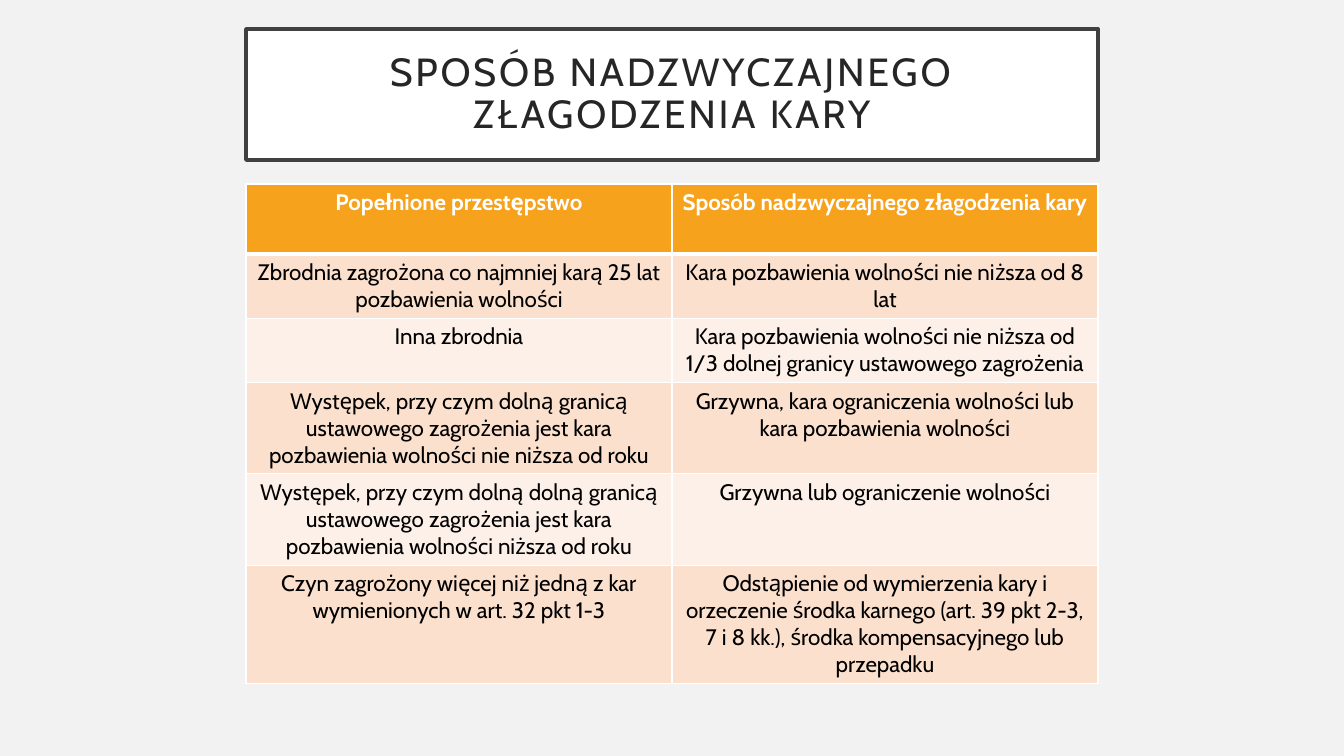
from lxml import etree
from pptx import Presentation
from pptx import util as u
from pptx.dml.color import RGBColor
from pptx.enum import shapes, text
from pptx.oxml import ns

COLORS = {
    "page": "F2F2F2", "white": "FFFFFF", "frame": "404040", "title": "262626",
    "header": "F6A21D", "odd": "FBE0CD", "even": "FDF0E8", "body": "000000",
}
ROWS = [
    ("Popełnione przestępstwo", "Sposób nadzwyczajnego złagodzenia kary"),
    ("Zbrodnia zagrożona co najmniej karą 25 lat pozbawienia wolności",
     "Kara pozbawienia wolności nie niższa od 8 lat"),
    ("Inna zbrodnia",
     "Kara pozbawienia wolności nie niższa od 1/3 dolnej granicy ustawowego zagrożenia"),
    ("Występek, przy czym dolną granicą ustawowego zagrożenia jest kara "
     "pozbawienia wolności nie niższa od roku",
     "Grzywna, kara ograniczenia wolności lub kara pozbawienia wolności"),
    ("Występek, przy czym dolną dolną granicą ustawowego zagrożenia jest kara "
     "pozbawienia wolności niższa od roku",
     "Grzywna lub ograniczenie wolności"),
    ("Czyn zagrożony więcej niż jedną z kar wymienionych w art. 32 pkt 1-3",
     "Odstąpienie od wymierzenia kary i orzeczenie środka karnego "
     "(art. 39 pkt 2-3, 7 i 8 kk.), środka kompensacyjnego lub przepadku"),
]


def px(count):
    return u.Emu(round(count * 914400 / 100.8))


def rgb(name):
    return RGBColor.from_string(COLORS[name])


def write(frame, words, size=16, color="body", bold=False, spacing=None, leading=None):
    frame.word_wrap = True
    para = frame.paragraphs[0]
    para.alignment = text.PP_ALIGN.CENTER
    if leading:
        para.line_spacing = leading
    span = para.add_run()
    span.text = words
    span.font.name = "Cabin"
    span.font.size = u.Pt(size)
    span.font.bold = bold
    span.font.color.rgb = rgb(color)
    if spacing:
        span.font._element.set("spc", str(spacing * 100))


class Slide:
    """Draws the elements of one page in a shared style."""

    def __init__(self, deck):
        self.page = deck.slides.add_slide(deck.slide_layouts[6])
        self.page.background.fill.solid()
        self.page.background.fill.fore_color.rgb = rgb("page")

    def title(self, words, left, top, width, height):
        box = self.page.shapes.add_shape(
            shapes.MSO_SHAPE.RECTANGLE, px(left), px(top), px(width), px(height))
        box.shadow.inherit = False
        box.fill.solid()
        box.fill.fore_color.rgb = rgb("white")
        box.line.color.rgb = rgb("frame")
        box.line.width = u.Pt(2.5)
        frame = box.text_frame
        frame.vertical_anchor = text.MSO_ANCHOR.MIDDLE
        frame.margin_left = frame.margin_right = px(20)
        frame.margin_top = frame.margin_bottom = px(20)
        write(frame, words, size=28, color="title", spacing=2, leading=0.9)

    def borders(self, cell, top, bottom):
        properties = cell._tc.get_or_add_tcPr()
        widths = {"lnL": 1, "lnR": 1, "lnT": top, "lnB": bottom}
        for place, (side, points) in enumerate(widths.items()):
            line = etree.Element(ns.qn(f"a:{side}"), w=str(u.Pt(points)))
            fill = etree.SubElement(line, ns.qn("a:solidFill"))
            etree.SubElement(fill, ns.qn("a:srgbClr"), val=COLORS["white"])
            properties.insert(place, line)

    def table(self, rows, left, top, width, height, header_height, row_height):
        holder = self.page.shapes.add_table(
            len(rows), len(rows[0]), px(left), px(top), px(width), px(height))
        grid = holder.table
        for index, row in enumerate(rows):
            header = index == 0
            grid.rows[index].height = px(header_height if header else row_height)
            shade = "header" if header else "odd" if index % 2 else "even"
            for column, words in enumerate(row):
                cell = grid.cell(index, column)
                cell.fill.solid()
                cell.fill.fore_color.rgb = rgb(shade)
                self.borders(cell, top=3 if index == 1 else 1, bottom=3 if header else 1)
                write(cell.text_frame, words, bold=header,
                      color="white" if header else "body")
        holder.height = px(height)


def main():
    deck = Presentation()
    deck.slide_width, deck.slide_height = px(1344), px(756)
    slide = Slide(deck)
    slide.title("SPOSÓB NADZWYCZAJNEGO ZŁAGODZENIA KARY", 246, 29, 852, 131)
    slide.table(ROWS, 246, 184, 852, 496, header_height=70, row_height=41)
    deck.save("out.pptx")


if __name__ == "__main__":
    main()
